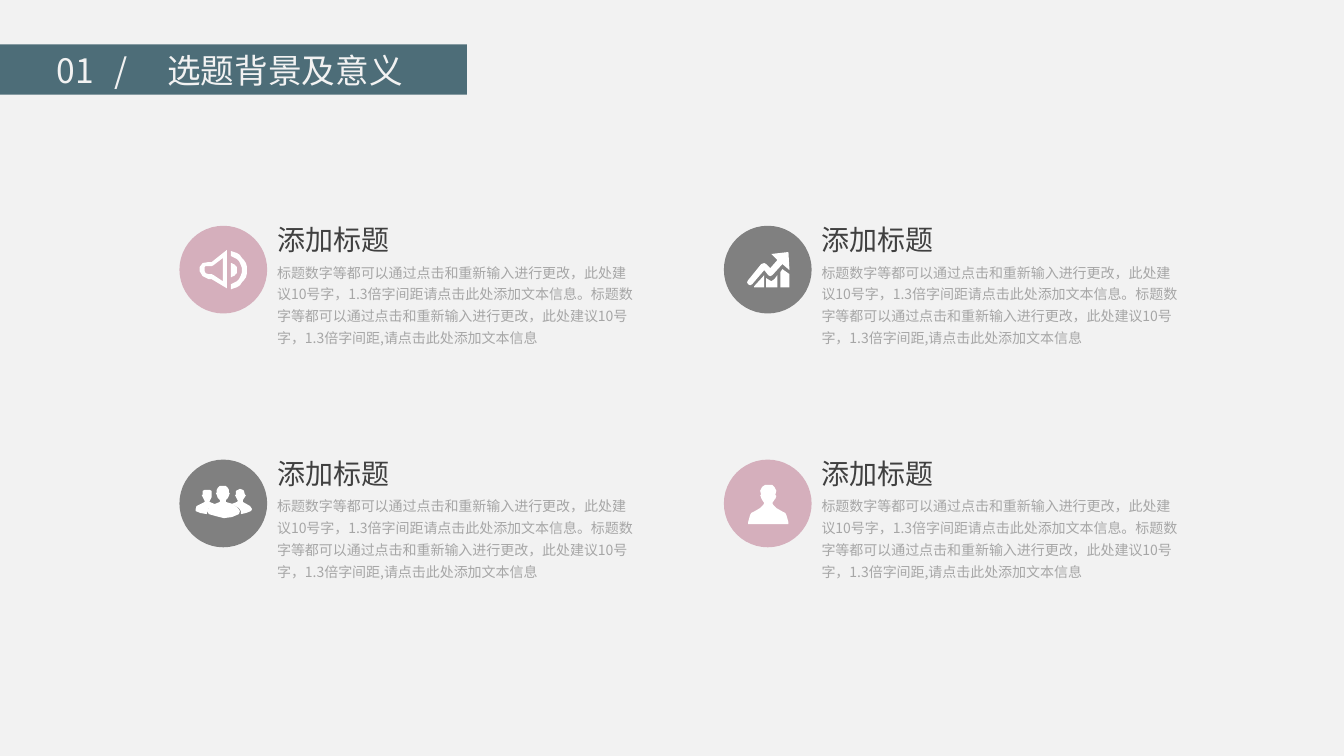
import math

import lxml.etree
import pptx
import pptx.dml.color
import pptx.enum.shapes
import pptx.enum.text
import pptx.oxml.ns
import pptx.util
from pptx.util import Inches

FONT = "Noto Sans CJK SC"
TEAL, PINK, GREY = "4D6D78", "D5AFBC", "808080"
PALE, WHITE, DARK_TEXT, BODY_TEXT = "F2F2F2", "FFFFFF", "404040", "A6A6A6"

HEADING = "添加标题"
BODY = (
    "标题数字等都可以通过点击和重新输入进行更改，此处建议10号字，"
    "1.3倍字间距请点击此处添加文本信息。"
    "标题数字等都可以通过点击和重新输入进行更改，此处建议10号字，"
    "1.3倍字间距,请点击此处添加文本信息"
)


def arc(center_x, center_y, radius_x, radius_y, start, end, steps=16):
    """Return points along an elliptical arc, with angles in degrees."""
    angles = [math.radians(start + (end - start) * i / steps) for i in range(steps + 1)]
    return [(center_x + radius_x * math.cos(a), center_y + radius_y * math.sin(a))
            for a in angles]


# An icon is a list of shapes, a shape a list of outlines;
# points are in hundredths of an inch from the corner of the badge.
SPEAKER = [
    [[(29, 36), (23, 37.3), (20, 41), (20, 45), (23, 50.5), (29, 53), (32, 53),
      (47, 62), (47, 24), (32, 36)],
     [(34, 39), (43, 32), (43, 55), (34, 49), (32, 48), (29, 48), (26, 47),
      (25, 45), (25, 41), (26, 40.3), (29, 40), (32, 40)]],
    [arc(51, 44, 6, 7, -90, 90)],
    [arc(48, 44, 19, 19, -81, 81) + arc(48, 44, 14, 14, 78, -78)],
]
GROWTH = [[
    [(40, 44), (28, 58), (26, 59), (24, 58), (23, 56), (24, 54), (37, 38),
     (40, 37), (42, 38), (46, 42), (53, 34), (47, 28), (64, 26), (65, 44),
     (58, 38), (48, 49), (46, 50), (44, 49)],
    [(30, 61), (40, 61), (40, 49), (30, 60)],
    [(50, 53), (47, 55), (42, 52), (42, 61), (53, 61), (53, 49)],
    [(58, 43), (56, 46), (56, 61), (65, 61), (65, 48)],
]]
TEAM = [
    [[(46, 42), (46, 40), (48, 38), (49, 36), (50, 33), (49, 33), (49, 30),
      (48, 28), (46, 26.5), (43, 26), (40, 26.5), (38, 28), (37, 30), (37, 33),
      (36.5, 33), (37, 35), (38, 38), (40, 40), (40, 42), (35, 44), (30, 42),
      (30, 41), (32, 37), (32.5, 35), (32, 35), (32, 31), (30.5, 30), (28, 29.5),
      (25, 30), (23, 31), (23, 35), (22.5, 35), (23, 37), (25, 41), (25, 42),
      (17, 46), (15.5, 49), (16, 51), (21, 53.3), (27, 54), (29, 48), (31, 46),
      (30, 47), (28.5, 51), (29, 54), (36, 56.5), (44, 57.8), (52, 57), (59, 54),
      (59.5, 51), (58, 48), (53, 44.5)]],
    [[(70, 46), (63, 42), (63, 40), (65, 37), (65.5, 35), (65, 35), (64.5, 31),
      (63, 29.5), (60, 29), (57.5, 29.7), (56, 31), (55.5, 35), (55, 35),
      (56, 37), (58, 41), (57, 42), (52, 44), (59, 48), (61, 51), (61, 54),
      (66, 53.3), (71, 51), (71.5, 49)]],
]
PERSON = [[
    [(64, 64), (24, 64), (24, 62), (26, 55), (27, 53), (29, 52), (36, 48),
     (39, 45), (40, 43), (38, 40), (37, 38), (36, 35), (37, 35), (36.5, 31),
     (38, 27), (41, 25.3), (44, 24.8), (48, 25), (50, 27), (52, 31), (51, 35),
     (52, 36), (51, 39), (50, 40), (48, 43), (49, 45), (52, 48), (59, 52),
     (61, 53), (62, 55), (64, 62)],
]]


def color(value):
    return pptx.dml.color.RGBColor.from_string(value)


def paint(shape, value):
    shape.shadow.inherit = False
    shape.fill.solid()
    shape.fill.fore_color.rgb = color(value)
    shape.line.fill.background()


def format_runs(paragraph, size, value):
    for run in paragraph.runs:
        run.font.size = pptx.util.Pt(size)
        run.font.name = FONT
        run.font.color.rgb = color(value)
        properties = run.font._element
        lxml.etree.SubElement(properties, pptx.oxml.ns.qn("a:ea"), typeface=FONT)


def add_text(slide, box, text, size, value, line_spacing=1.0):
    frame = slide.shapes.add_textbox(*map(Inches, box)).text_frame
    frame.word_wrap = True
    frame.text = text
    frame.paragraphs[0].line_spacing = line_spacing
    format_runs(frame.paragraphs[0], size, value)


def add_title_bar(slide, left, top, width, height):
    title = slide.shapes.title
    title.left, title.top, title.width, title.height = map(
        Inches, (left, top, width, height))
    paint(title, TEAL)
    frame = title.text_frame
    frame.margin_left = Inches(0.63)
    frame.margin_right = frame.margin_top = frame.margin_bottom = 0
    frame.vertical_anchor = pptx.enum.text.MSO_ANCHOR.MIDDLE
    frame.word_wrap = True
    frame.text = "01\t/\t选题背景及意义"
    paragraph = frame.paragraphs[0]
    paragraph.alignment = pptx.enum.text.PP_ALIGN.LEFT
    tab_list = lxml.etree.SubElement(
        paragraph._p.get_or_add_pPr(), pptx.oxml.ns.qn("a:tabLst"))
    for position in (0.58, 1.1):
        lxml.etree.SubElement(tab_list, pptx.oxml.ns.qn("a:tab"),
                              pos=str(Inches(position)), algn="l")
    format_runs(paragraph, 24, PALE)


def add_badge(slide, left, top, size, fill, icon):
    """Add a filled circle with a white icon, as one group."""
    shapes = slide.shapes.add_group_shape().shapes
    circle = shapes.add_shape(pptx.enum.shapes.MSO_SHAPE.OVAL,
                              *map(Inches, (left, top, size, size)))
    paint(circle, fill)
    for outlines in icon:
        builder = shapes.build_freeform(*outlines[0][0], scale=Inches(0.01))
        builder.add_line_segments(outlines[0][1:], close=True)
        for outline in outlines[1:]:
            builder.move_to(*outline[0])
            builder.add_line_segments(outline[1:], close=True)
        paint(builder.convert_to_shape(Inches(left), Inches(top)), WHITE)


def add_topic(slide, left, top, fill, icon):
    badge_size = 0.87
    add_badge(slide, left, top + 0.08, badge_size, fill, icon)
    text_left = left + badge_size
    add_text(slide, (text_left, top, 1.33, 0.44), HEADING, 20, DARK_TEXT)
    add_text(slide, (text_left, top + 0.36, 3.74, 1.19), BODY, 10, BODY_TEXT, 1.3)


def main():
    presentation = pptx.Presentation()
    presentation.slide_width, presentation.slide_height = Inches(13.33), Inches(7.5)
    slide = presentation.slides.add_slide(
        presentation.slide_layouts.get_by_name("Title Only"))
    slide.background.fill.solid()
    slide.background.fill.fore_color.rgb = color(PALE)

    add_title_bar(slide, -0.07, 0.44, 4.7, 0.5)
    topics = [(PINK, SPEAKER), (GREY, GROWTH), (GREY, TEAM), (PINK, PERSON)]
    for index, (fill, icon) in enumerate(topics):
        row, column = divmod(index, 2)
        add_topic(slide, 1.78 + 5.4 * column, 2.16 + 2.32 * row, fill, icon)
    presentation.save("out.pptx")


if __name__ == "__main__":
    main()
